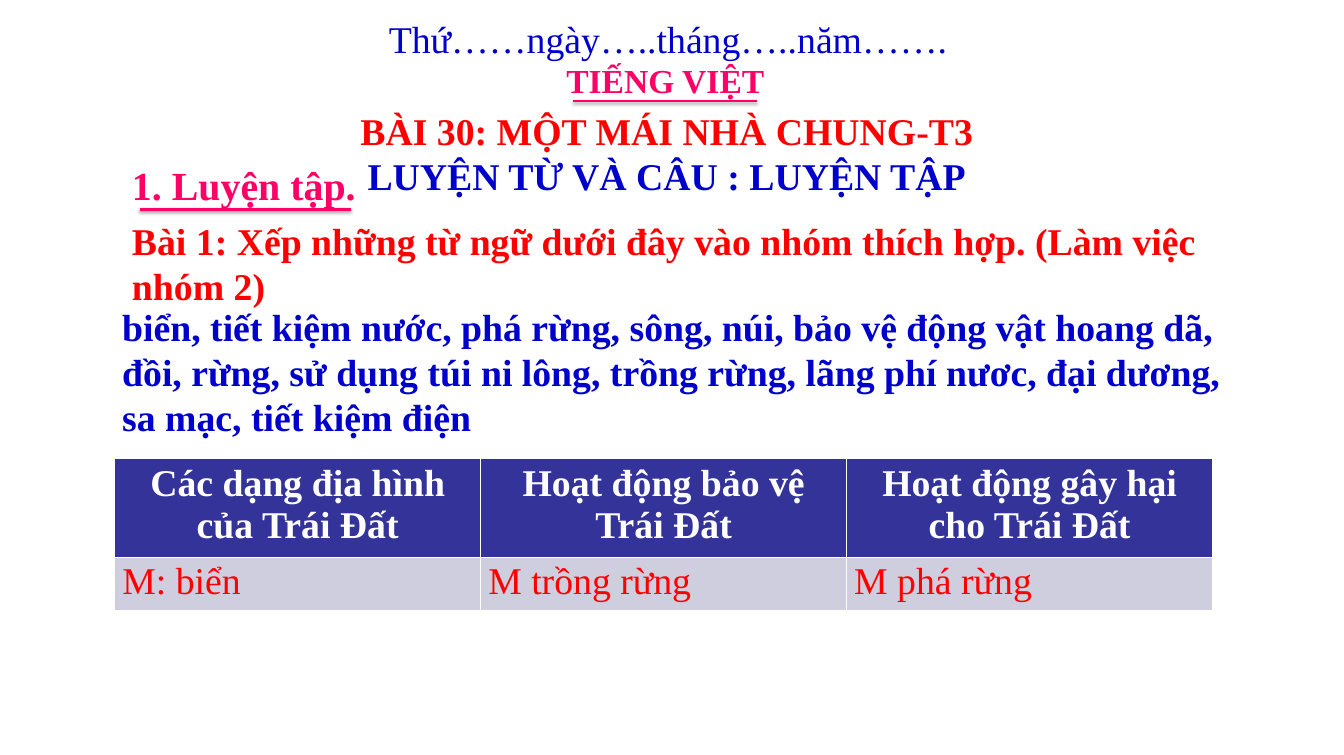
"""Build a Vietnamese lesson slide with headings, an exercise and a sorting table."""
from pptx import Presentation
from pptx.dml.color import RGBColor
from pptx.enum.shapes import MSO_CONNECTOR
from pptx.enum.text import MSO_ANCHOR, MSO_AUTO_SIZE, PP_ALIGN
from pptx.util import Cm, Pt

STRAIGHT = MSO_CONNECTOR.STRAIGHT
TOP = MSO_ANCHOR.TOP
NO_FIT = MSO_AUTO_SIZE.NONE
LEFT, CENTER = PP_ALIGN.LEFT, PP_ALIGN.CENTER

BLUE, RED, PINK, WHITE = "0000CC", "FF0000", "FF0066", "FFFFFF"
HEADER_FILL, BODY_FILL = "333399", "CECEDE"

GROUPS = [
    ("Các dạng địa hình của Trái Đất", "M: biển"),
    ("Hoạt động bảo vệ Trái Đất", "M trồng rừng"),
    ("Hoạt động gây hại cho Trái Đất", "M phá rừng"),
]


def color(value):
    """Return the colour for a hex string."""
    return RGBColor.from_string(value)


class LessonPage:
    """Hold the style and the current slide."""

    font_name = "Times New Roman"

    def __init__(self, deck):
        """Add a title-only slide to the deck."""
        self.page = deck.slides.add_slide(deck.slide_layouts[5])

    def style(self, para, hue, size=36, bold=True, align=LEFT):
        """Format one paragraph and its runs."""
        para.alignment = align
        for span in para.runs:
            span.font.name = self.font_name
            span.font.size = Pt(size)
            span.font.bold = bold
            span.font.color.rgb = color(hue)

    def title(self, lines, hues, left, top, width, height):
        """Place the title with one colour for each line."""
        box = self.page.shapes.title
        box.left, box.top, box.width, box.height = map(Cm, (left, top, width, height))
        frame = box.text_frame
        frame.text = "\n".join(lines)
        frame.word_wrap = False
        frame.auto_size = NO_FIT
        frame.vertical_anchor = TOP
        for para, hue in zip(frame.paragraphs, hues):
            self.style(para, hue, align=CENTER)

    def text(self, words, hue, left, top, width, height, size=36, bold=True):
        """Add a wrapped text box."""
        box = self.page.shapes.add_textbox(Cm(left), Cm(top), Cm(width), Cm(height))
        box.text_frame.word_wrap = True
        box.text_frame.text = words
        self.style(box.text_frame.paragraphs[0], hue, size, bold)

    def underline(self, left, right, top, weight):
        """Add a horizontal pink rule with the theme shadow."""
        rule = self.page.shapes.add_connector(
            STRAIGHT, Cm(left), Cm(top), Cm(right), Cm(top))
        rule.line.color.rgb = color(PINK)
        rule.line.width = Pt(weight)

    def table(self, groups, left, top, width, heights):
        """Add a table with one column for each group."""
        grid = self.page.shapes.add_table(
            len(heights), len(groups), Cm(left), Cm(top), Cm(width), Cm(sum(heights))).table
        for row, height in zip(grid.rows, heights):
            row.height = Cm(height)
        for column, (heading, example) in enumerate(groups):
            self.cell(grid.cell(0, column), heading, HEADER_FILL, WHITE, True, CENTER)
            self.cell(grid.cell(1, column), example, BODY_FILL, RED, False, LEFT)

    def cell(self, cell, words, fill, hue, bold, align):
        """Fill one table cell and write its text."""
        cell.fill.solid()
        cell.fill.fore_color.rgb = color(fill)
        cell.text_frame.text = words
        self.style(cell.text_frame.paragraphs[0], hue, bold=bold, align=align)


def main():
    """Build and save the deck."""
    deck = Presentation()
    deck.slide_width, deck.slide_height = Cm(45.21), Cm(25.4)
    lesson = LessonPage(deck)
    lesson.text("Thứ……ngày…..tháng…..năm…….", BLUE, 12.83, 0.41, 19.48, 1.8, bold=False)
    lesson.text("TIẾNG VIỆT", PINK, 18.8, 1.9, 7.24, 1.63, size=32)
    lesson.underline(19.28, 25.48, 3.4, 2)
    lesson.title(["BÀI 30: MỘT MÁI NHÀ CHUNG-T3", "LUYỆN TỪ VÀ CÂU : LUYỆN TẬP"],
                 [RED, BLUE], 11.76, 3.5, 21.34, 3.33)
    lesson.text("1. Luyện tập.", PINK, 4.19, 5.28, 11.63, 1.88, size=38)
    lesson.underline(4.7, 11.81, 7.04, 3)
    lesson.text("Bài 1: Xếp những từ ngữ dưới đây vào nhóm thích hợp. (Làm việc nhóm 2)",
                RED, 4.19, 7.19, 38.79, 3.33)
    lesson.text("biển, tiết kiệm nước, phá rừng, sông, núi, bảo vệ động vật hoang dã, "
                "đồi, rừng, sử dụng túi ni lông, trồng rừng, lãng phí nươc, đại dương, "
                "sa mạc, tiết kiệm điện", BLUE, 3.86, 10.08, 38.79, 4.88)
    lesson.table(GROUPS, 3.86, 15.44, 36.93, [3.27, 1.8])
    deck.save("out.pptx")


if __name__ == "__main__":
    main()
